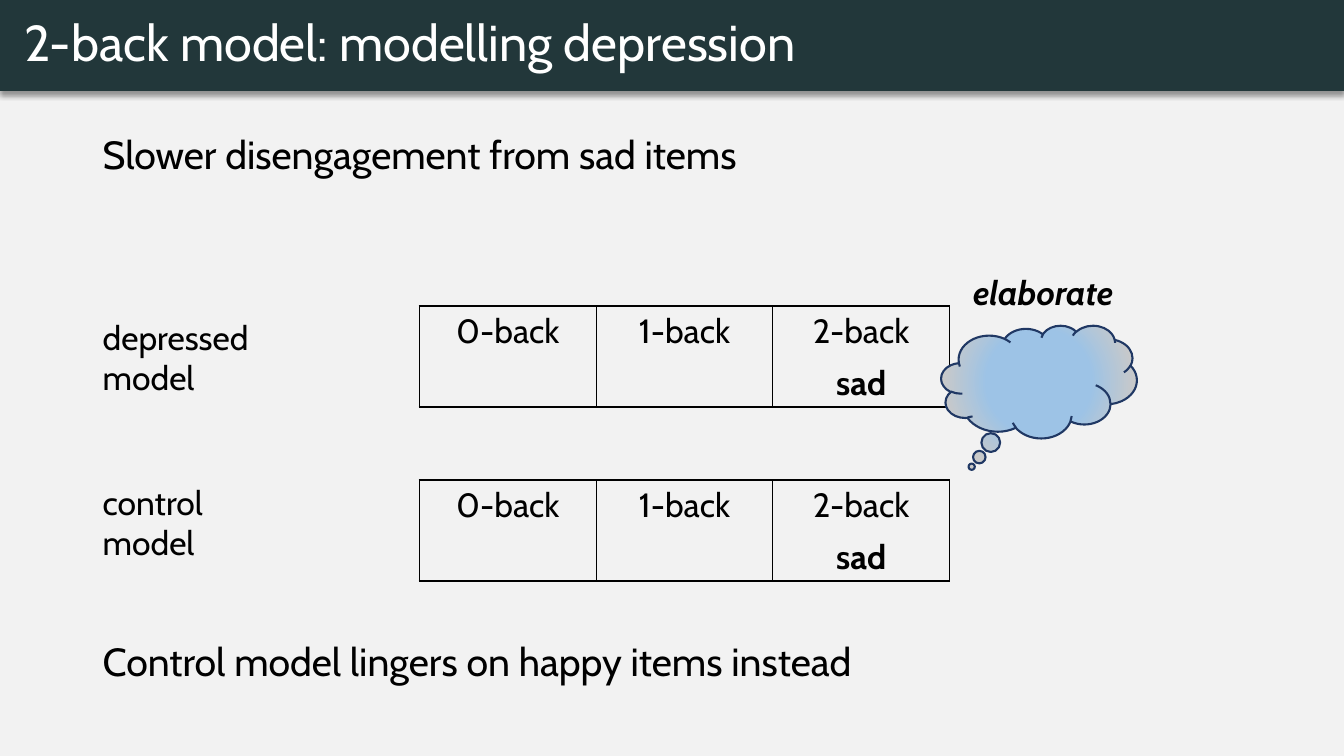
from lxml import etree
from pptx import Presentation
from pptx.dml.color import RGBColor
from pptx.enum import shapes, text
from pptx.oxml import parse_xml
from pptx.oxml.ns import nsdecls, qn
from pptx.util import Cm, Pt

FONT = "Cabin"
INK = "000000"
LEFT, CENTER = text.PP_ALIGN.LEFT, text.PP_ALIGN.CENTER
MIDDLE = text.MSO_ANCHOR.MIDDLE


def rgb(value):
    """Turn a hex string into a colour."""
    return RGBColor.from_string(value)


def write(tf, lines, size=24, color=INK, bold=False, italic=False, align=LEFT, spacing=None):
    """Fill a text frame with one paragraph per line."""
    for i, line in enumerate(lines.split("\n")):
        p = tf.add_paragraph() if i else tf.paragraphs[0]
        p.alignment = align
        if spacing:
            p.line_spacing = spacing
        r = p.add_run()
        r.text = line
        r.font.name, r.font.size = FONT, Pt(size)
        r.font.bold, r.font.italic = bold, italic
        r.font.color.rgb = rgb(color)


def add_label(s, x, y, w, h, lines, wrap=True, **style):
    """Place a text box, in centimetres."""
    tf = s.shapes.add_textbox(Cm(x), Cm(y), Cm(w), Cm(h)).text_frame
    tf.word_wrap = wrap
    write(tf, lines, **style)


def add_title(s, x, y, w, h, title):
    """Draw the dark title bar with its soft shadow."""
    sp = s.shapes.add_shape(shapes.MSO_SHAPE.RECTANGLE, Cm(x), Cm(y), Cm(w), Cm(h))
    sp.fill.solid()
    sp.fill.fore_color.rgb = rgb("22373A")
    sp.line.fill.background()
    sp.shadow.inherit = False
    effects = sp._element.spPr.find(qn("a:effectLst"))
    effects.append(parse_xml(
        f'<a:outerShdw {nsdecls("a")} blurRad="{Pt(4)}" dist="{Pt(3)}" dir="5400000" algn="t" '
        f'rotWithShape="0"><a:srgbClr val="{INK}"><a:alpha val="40000"/></a:srgbClr></a:outerShdw>'))
    tf = sp.text_frame
    tf.word_wrap = True
    tf.vertical_anchor = MIDDLE
    tf.margin_left = Cm(0.61)
    write(tf, title, size=36, color="FFFFFF", spacing=0.9)


def set_borders(cell, **widths):
    """Set the L, R, T and B borders of a cell in points, 0 for none."""
    tcPr = cell._tc.get_or_add_tcPr()
    for i, side in enumerate("LRTB"):
        width = widths[side]
        paint = f'<a:solidFill><a:srgbClr val="{INK}"/></a:solidFill>' if width else "<a:noFill/>"
        tcPr.insert(i, parse_xml(f'<a:ln{side} {nsdecls("a")} w="{Pt(width)}">{paint}</a:ln{side}>'))


def add_memory(s, x, y, w, h, name, name_dy):
    """Draw one model: its name, the three-slot table and the item in the last slot."""
    slots = ["0-back", "1-back", "2-back"]
    last, slot_w = len(slots) - 1, w / len(slots)
    table = s.shapes.add_table(2, len(slots), Cm(x), Cm(y), Cm(w), Cm(h)).table
    table.first_row = table.horz_banding = False
    for column in table.columns:
        column.width = Cm(slot_w)
    for i, row in enumerate(table.rows):
        row.height = Cm(h / 2)
        for j, cell in enumerate(row.cells):
            cell.fill.background()
            cell.vertical_anchor = MIDDLE
            set_borders(cell, L=1 if j else 1.5, R=1.5 if j == last else 1,
                        T=0 if i else 1.5, B=1.5 if i else 0)
            if i == 0:
                write(cell.text_frame, slots[j], align=CENTER)
    item_w = 1.9
    add_label(s, x + w - (slot_w + item_w) / 2, y + h / 2, item_w, h / 2, "sad",
              wrap=False, bold=True, align=CENTER)
    add_label(s, 2.34, y + name_dy, 4.85, 2.31, name)


def add_thought(s, x, y, w, h):
    """Draw the thought cloud with its caption above."""
    sp = s.shapes.add_shape(shapes.MSO_SHAPE.CLOUD_CALLOUT, Cm(x), Cm(y), Cm(w), Cm(h))
    sp.adjustments[0], sp.adjustments[1] = -0.344, 0.754
    sp.shadow.inherit = False
    sp.line.color.rgb = rgb("203864")
    sp.line.width = Pt(1.5)
    sp.fill.gradient()
    for stop, (position, color) in zip(sp.fill.gradient_stops, [(0.46, "9DC3E6"), (0.86, "C9C9C9")]):
        stop.position = position
        stop.color.rgb = rgb(color)
    grad = sp._element.spPr.find(qn("a:gradFill"))
    radial = etree.Element(qn("a:path"), {"path": "circle"})
    etree.SubElement(radial, qn("a:fillToRect"), dict.fromkeys("ltrb", "50000"))
    grad.replace(grad.find(qn("a:lin")), radial)
    add_label(s, x + 0.41, y - 1.47, 4.32, 1.27, "elaborate",
              wrap=False, bold=True, italic=True, align=CENTER)


def main():
    """Build the slide and save it."""
    prs = Presentation()
    prs.slide_width, prs.slide_height = Cm(33.87), Cm(19.05)
    s = prs.slides.add_slide(prs.slide_layouts[6])
    s.background.fill.solid()
    s.background.fill.fore_color.rgb = rgb("F2F2F2")
    add_title(s, 0, 0, 33.87, 2.29, "2-back model: modelling depression")
    for y, statement in [(3.3, "Slower disengagement from sad items"),
                         (16.08, "Control model lingers on happy items instead")]:
        add_label(s, 2.34, y, 29.2, 1.4, statement, size=28, spacing=0.9)
    for y, name, name_dy in [(7.72, "depressed\nmodel", 0.13), (12.1, "control model", -0.08)]:
        add_memory(s, 10.57, y, 13.36, 2.54, name, name_dy)
    add_thought(s, 23.72, 8.2, 4.93, 2.84)
    prs.save("out.pptx")


if __name__ == "__main__":
    main()
